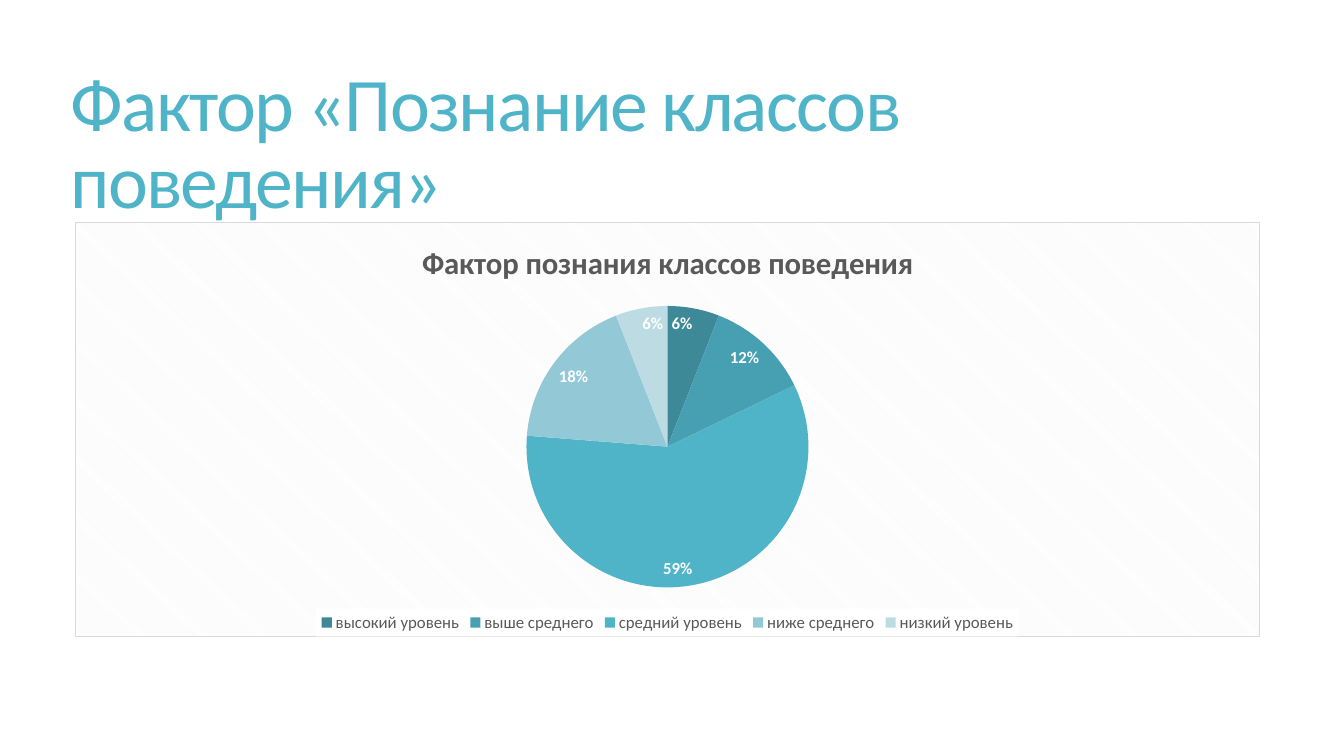
"""Build a slide with a pie chart of the levels of understanding behaviour classes."""
from dataclasses import dataclass

from lxml import etree
from pptx import Presentation
from pptx import util as u
from pptx.chart import chart as ch
from pptx.chart import data as cd
from pptx.dml.color import RGBColor
from pptx.enum import chart as ce
from pptx.enum import text
from pptx.oxml import parse_xml
from pptx.slide import Slide
from pptx.text.text import Font

FONT = "Calibri"
TEAL = RGBColor(0x50, 0xB4, 0xC8)
GREY = RGBColor(0x59, 0x59, 0x59)
WHITE = RGBColor(0xFF, 0xFF, 0xFF)
HATCH = RGBColor(0xF2, 0xF2, 0xF2)
BORDER = RGBColor(0xD9, 0xD9, 0xD9)
NAMESPACES = (
    'xmlns:c="http://schemas.openxmlformats.org/drawingml/2006/chart" '
    'xmlns:a="http://schemas.openxmlformats.org/drawingml/2006/main"'
)


@dataclass(frozen=True)
class Level:
    name: str
    percent: int
    color: RGBColor


LEVELS = [
    Level("высокий уровень", 6, RGBColor(0x3D, 0x89, 0x98)),
    Level("выше среднего", 12, RGBColor(0x47, 0xA0, 0xB2)),
    Level("средний уровень", 59, TEAL),
    Level("ниже среднего", 18, RGBColor(0x93, 0xC9, 0xD6)),
    Level("низкий уровень", 6, RGBColor(0xBC, 0xDB, 0xE3)),
]
FACTOR = "Фактор познания классов поведения"


def style_font(font: Font, size: float, color: RGBColor, bold: bool = False) -> None:
    font.name = FONT
    font.size = u.Pt(size)
    font.bold = bold
    font.color.rgb = color


def set_background(part: etree.ElementBase, formatting: str) -> None:
    properties = parse_xml(f"<c:spPr {NAMESPACES}>{formatting}</c:spPr>")
    part.find("{*}txPr").addprevious(properties)


def add_heading(slide: Slide) -> None:
    heading = slide.shapes.add_textbox(
        u.Inches(0.6), u.Inches(0.55), u.Inches(12.25), u.Inches(1.81)
    )
    frame = heading.text_frame
    frame.word_wrap = True
    frame.vertical_anchor = text.MSO_ANCHOR.MIDDLE
    frame.text = "Фактор «Познание классов поведения»"
    paragraph = frame.paragraphs[0]
    paragraph.line_spacing = 0.85
    run = paragraph.runs[0]
    style_font(run.font, 54, TEAL)
    run.font._element.set("spc", "-120")


def style_title(chart: ch.Chart) -> None:
    chart.has_title = True
    title = chart.chart_title
    title.include_in_layout = False
    title.text_frame.text = FACTOR
    style_font(title.text_frame.paragraphs[0].runs[0].font, 22, GREY, bold=True)


def style_legend(chart: ch.Chart) -> None:
    chart.has_legend = True
    legend = chart.legend
    legend.position = ce.XL_LEGEND_POSITION.BOTTOM
    legend.include_in_layout = False
    style_font(legend.font, 12, GREY)
    set_background(
        legend._element, f'<a:solidFill><a:srgbClr val="{WHITE}"/></a:solidFill>'
    )


def style_slices(chart: ch.Chart) -> None:
    pie = chart.plots[0]
    pie.vary_by_categories = True
    for index, level in enumerate(LEVELS):
        fill = pie.series[0].points[index].format.fill
        fill.solid()
        fill.fore_color.rgb = level.color
    labels = pie.series[0].data_labels
    labels.show_value = True
    labels.show_percentage = False
    labels.number_format = '0"%"'
    labels.number_format_is_linked = False
    labels.position = ce.XL_LABEL_POSITION.INSIDE_END
    style_font(labels.font, 12, WHITE, bold=True)


def add_pie(slide: Slide) -> None:
    values = cd.CategoryChartData()
    values.categories = [level.name for level in LEVELS]
    values.add_series(FACTOR, [level.percent for level in LEVELS])
    chart = slide.shapes.add_chart(
        ce.XL_CHART_TYPE.PIE,
        u.Inches(0.74), u.Inches(2.2), u.Inches(11.76), u.Inches(4.12),
        values,
    ).chart
    chart.font.name = FONT
    chart.font.size = u.Pt(10)
    style_title(chart)
    style_legend(chart)
    style_slices(chart)
    set_background(
        chart._chartSpace,
        '<a:pattFill prst="dkDnDiag">'
        f'<a:fgClr><a:srgbClr val="{HATCH}"/></a:fgClr>'
        f'<a:bgClr><a:srgbClr val="{WHITE}"/></a:bgClr></a:pattFill>'
        f'<a:ln w="{u.Pt(0.75)}"><a:solidFill><a:srgbClr val="{BORDER}"/>'
        "</a:solidFill></a:ln>",
    )


def main() -> None:
    deck = Presentation()
    deck.slide_width = u.Inches(13.33)
    deck.slide_height = u.Inches(7.5)
    slide = deck.slides.add_slide(deck.slide_layouts[6])
    add_heading(slide)
    add_pie(slide)
    deck.save("out.pptx")


if __name__ == "__main__":
    main()
